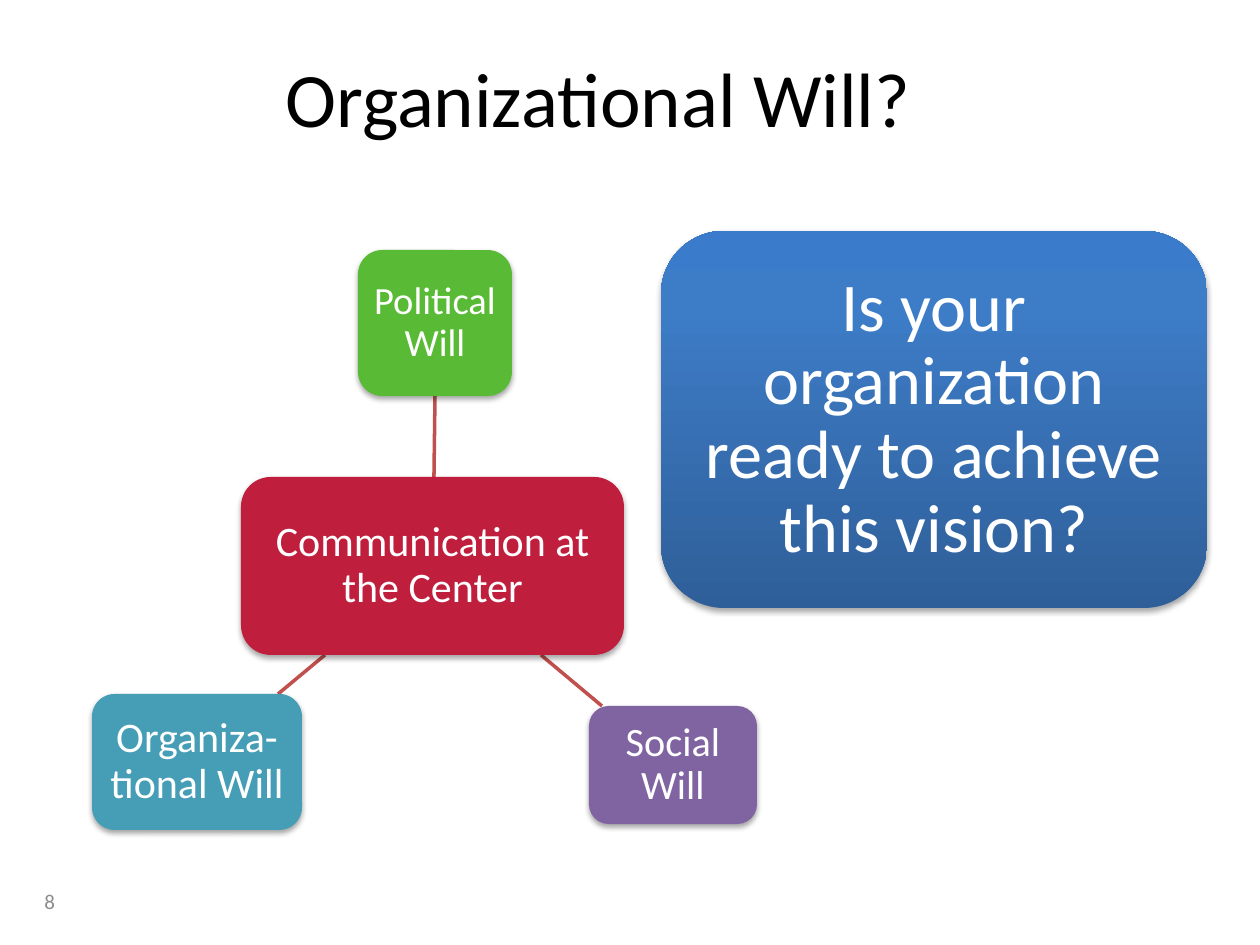
from lxml.etree import SubElement
from pptx import Presentation
from pptx.dml.color import RGBColor
from pptx.enum.shapes import MSO_CONNECTOR, MSO_SHAPE
from pptx.enum.text import MSO_ANCHOR as ANCHOR, PP_ALIGN as ALIGN
from pptx.oxml.ns import qn
from pptx.util import Pt

EMU_PER_PX = 914400 / 126
COLORS = {
    "title": "000000", "number": "8C8C8C", "text": "FFFFFF", "link": "C0504D",
    "hub": "C01E3D", "political": "59BB35", "social": "8064A2",
    "organization": "459EB6", "shadow": "000000",
    "deep": "2F5F99", "mid": "3D7CC7", "top": "3A7CCB",
}
CARD_FORMAT = {"alignment": ALIGN.CENTER, "line_spacing": 0.9}


def px(n):
    return round(n * EMU_PER_PX)


def rgb(name):
    return RGBColor.from_string(COLORS[name])


def add_color(parent, name):
    return SubElement(parent, qn("a:srgbClr"), val=COLORS[name])


def set_text(sp, text, size, color, inset=None, para_format=None):
    tf = sp.text_frame
    tf.word_wrap = True
    tf.vertical_anchor = ANCHOR.MIDDLE
    if inset is not None:
        for side in ("left", "top", "right", "bottom"):
            setattr(tf, f"margin_{side}", px(inset))
    p = tf.paragraphs[0]
    for key, value in (para_format or {"alignment": ALIGN.LEFT}).items():
        setattr(p, key, value)
    r = p.add_run()
    r.text = text
    for key, value in {"name": "Calibri", "size": Pt(size)}.items():
        setattr(r.font, key, value)
    r.font.color.rgb = rgb(color)


def add_label(s, box, text, size, color):
    set_text(s.shapes.add_textbox(*map(px, box)), text, size, color)


def add_shadow(sp):
    sp.shadow.inherit = False
    effects = sp._element.spPr.find(qn("a:effectLst"))
    shadow = SubElement(effects, qn("a:outerShdw"), blurRad="40000",
                        dist="23000", dir="5400000", rotWithShape="0")
    SubElement(add_color(shadow, "shadow"), qn("a:alpha"), val="35000")


def fill_gradient(sp, stops):
    """Replace the stops with (percent, color) pairs, running bottom to top."""
    sp.fill.gradient()
    grad = sp._element.spPr.find(qn("a:gradFill"))
    for child in list(grad):
        grad.remove(child)
    stop_list = SubElement(grad, qn("a:gsLst"))
    for percent, color in stops:
        add_color(SubElement(stop_list, qn("a:gs"), pos=str(percent * 1000)), color)
    SubElement(grad, qn("a:lin"), ang="16200000", scaled="0")


def add_card(s, box, text, size, inset, color=None):
    sp = s.shapes.add_shape(MSO_SHAPE.ROUNDED_RECTANGLE, *map(px, box))
    sp.line.fill.background()
    if color:
        sp.fill.solid()
        sp.fill.fore_color.rgb = rgb(color)
    add_shadow(sp)
    set_text(sp, text, size, "text", inset, CARD_FORMAT)
    return sp


def add_link(s, x1, y1, x2, y2):
    line = s.shapes.add_connector(MSO_CONNECTOR.STRAIGHT, *map(px, (x1, y1, x2, y2)))
    line.line.color.rgb = rgb("link")
    line.line.width = Pt(2)
    SubElement(line._element.spPr, qn("a:effectLst"))


def add_question(s, box):
    sp = add_card(s, box, "Is your organization ready to achieve this vision?", 39, 20)
    fill_gradient(sp, [(0, "deep"), (80, "mid"), (100, "top")])


def add_will_diagram(s, left, top):
    links = [(342, 227, 343, 146), (449, 405, 510, 456), (233, 405, 186, 444)]
    cards = [
        ((149, 227, 383, 178), "Communication at the Center", 24, 9, "hub"),
        ((266, 0, 154, 146), "Political Will", 22, 8, "political"),
        ((497, 456, 168, 118), "Social Will", 23, 8, "social"),
        ((0, 444, 210, 136), "Organiza-tional Will", 24, 9, "organization"),
    ]
    for x1, y1, x2, y2 in links:
        add_link(s, left + x1, top + y1, left + x2, top + y2)
    for (x, y, w, h), *content in cards:
        add_card(s, (left + x, top + y, w, h), *content)


def main():
    prs = Presentation()
    prs.slide_width, prs.slide_height = px(1260), px(945)
    s = prs.slides.add_slide(prs.slide_layouts[6])
    add_label(s, (273, 18, 1029, 157), "Organizational Will?", 44, "title")
    add_question(s, (661, 231, 546, 377))
    add_will_diagram(s, 92, 250)
    add_label(s, (32, 876, 294, 50), "8", 12, "number")
    prs.save("out.pptx")


if __name__ == "__main__":
    main()
